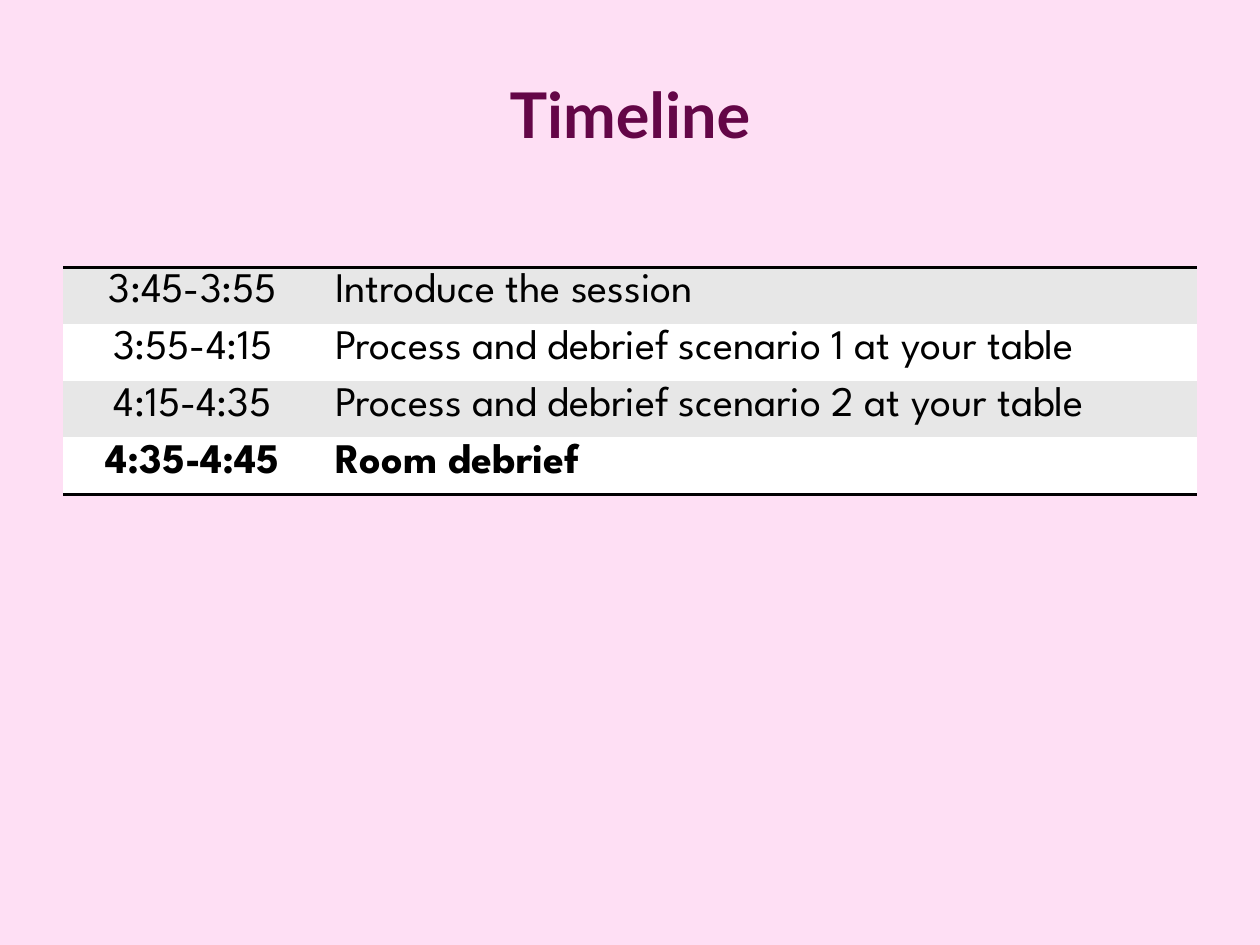
from pptx import Presentation
from pptx.dml.color import RGBColor
from pptx.enum.text import MSO_ANCHOR, PP_ALIGN
from pptx.oxml import parse_xml
from pptx.oxml.ns import nsdecls
from pptx.util import Inches, Pt

CENTER, LEFT = PP_ALIGN.CENTER, PP_ALIGN.LEFT
MIDDLE = MSO_ANCHOR.MIDDLE

PINK = RGBColor(0xFE, 0xDF, 0xF4)
PLUM = RGBColor(0x64, 0x06, 0x47)
GRAY = RGBColor(0xE7, 0xE7, 0xE7)
WHITE = RGBColor(0xFF, 0xFF, 0xFF)
BLACK = RGBColor(0x00, 0x00, 0x00)
PLAIN = "{2D5ABB26-0587-4C30-8999-92F81FD0307C}"  # no style, no grid

TITLE = "Timeline"
ROWS = [
    ("3:45-3:55", "Introduce the session"),
    ("3:55-4:15", "Process and debrief scenario 1 at your table"),
    ("4:15-4:35", "Process and debrief scenario 2 at your table"),
    ("4:35-4:45", "Room debrief"),
]
WIDTHS = (2.06, 6.94)
ALIGNS = (CENTER, LEFT)
ROW_H = 0.41
LAST = len(ROWS) - 1


def write(frame, text, name, size, color, align, bold):
    """Fill a frame; run fonts keep the table rows at their set height."""
    para = frame.paragraphs[0]
    para.alignment = align
    run = para.add_run()
    run.text = text
    font = run.font
    font.name, font.size, font.bold = name, Pt(size), bold
    font.color.rgb = color


def rule(cell, side):
    """Draw a black 2 pt border on the top (T) or bottom (B) of a cell."""
    cell._tc.get_or_add_tcPr().insert(0, parse_xml(
        f'<a:ln{side} {nsdecls("a")} w="{Pt(2)}"><a:solidFill>'
        f'<a:srgbClr val="{BLACK}"/></a:solidFill></a:ln{side}>'))


prs = Presentation()
prs.slide_width, prs.slide_height = Inches(10), Inches(7.5)
slide = prs.slides.add_slide(prs.slide_layouts[6])
back = slide.background.fill
back.solid()
back.fore_color.rgb = PINK

# Title
box = slide.shapes.add_textbox(Inches(0.5), Inches(0.3), Inches(9), Inches(1.2))
frame = box.text_frame
frame.word_wrap = True
frame.vertical_anchor = MIDDLE
write(frame, TITLE, "Lato", 36, PLUM, CENTER, True)

# Schedule table
table = slide.shapes.add_table(
    len(ROWS), len(WIDTHS), Inches(0.5), Inches(2.12),
    Inches(sum(WIDTHS)), Inches(ROW_H * len(ROWS))).table
table.first_row = table.horz_banding = False
table._tbl.tblPr.find("{*}tableStyleId").text = PLAIN
for col, width in zip(table.columns, WIDTHS):
    col.width = Inches(width)

for r, row in enumerate(ROWS):
    table.rows[r].height = Inches(ROW_H)
    for c, text in enumerate(row):
        cell = table.cell(r, c)
        cell.margin_bottom = 0
        write(cell.text_frame, text, "League Spartan", 24, BLACK,
              ALIGNS[c], r == LAST)
        cell.fill.solid()
        cell.fill.fore_color.rgb = WHITE if r % 2 else GRAY
        if r == 0:
            rule(cell, "T")
        if r == LAST:
            rule(cell, "B")

prs.save("out.pptx")
